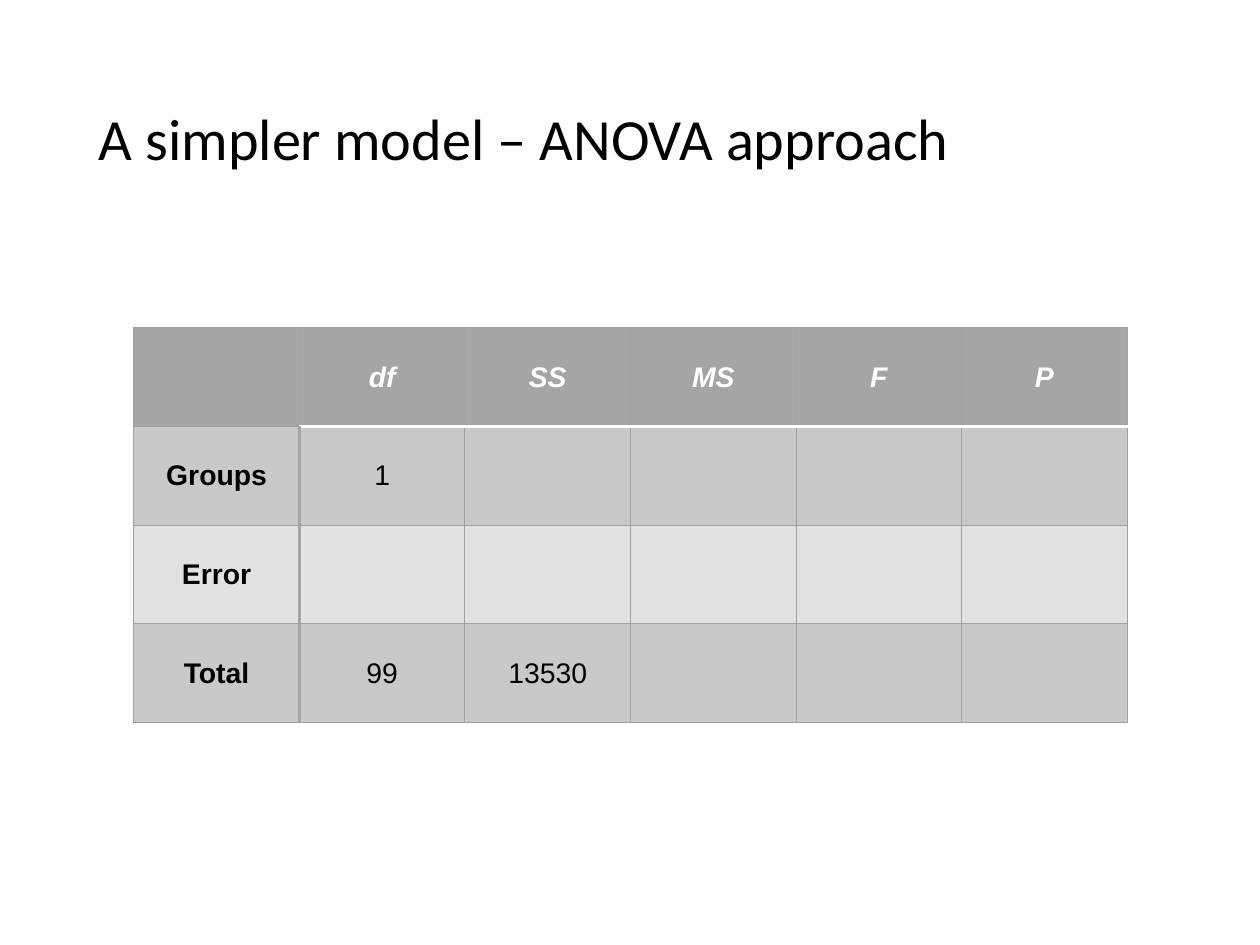
from dataclasses import dataclass

from lxml import etree
from pptx import Presentation
from pptx.dml.color import RGBColor
from pptx.enum.text import MSO_ANCHOR, PP_ALIGN
from pptx.oxml.ns import qn
from pptx.util import Inches, Pt

MIDDLE = MSO_ANCHOR.MIDDLE
LEFT, CENTER = PP_ALIGN.LEFT, PP_ALIGN.CENTER
TITLE_ONLY = 5


@dataclass(frozen=True)
class Theme:
    black: str = "000000"
    white: str = "FFFFFF"
    header: str = "A5A5A5"
    dark_band: str = "C9C9C9"
    light_band: str = "E2E2E2"
    grid: str = "A1A1A1"
    title_font: str = "Calibri"
    table_font: str = "Arial"
    title_size: float = 37
    table_size: float = 18
    thin: float = 0.75
    thick: float = 2


THEME = Theme()


def set_borders(cell, edges):
    """Draw cell edges from (side, colour, points), in the order L, R, T, B."""
    properties = cell._tc.get_or_add_tcPr()
    for position, (side, color, points) in enumerate(edges):
        line = etree.Element(qn(f"a:ln{side}"), w=str(Pt(points)))
        fill = etree.SubElement(line, qn("a:solidFill"))
        etree.SubElement(fill, qn("a:srgbClr"), val=color)
        properties.insert(position, line)


def style_text(paragraph, font_name, size, color, alignment):
    paragraph.alignment = alignment
    paragraph.font.name = font_name
    paragraph.font.size = Pt(size)
    paragraph.font.color.rgb = RGBColor.from_string(color)


prs = Presentation()
prs.slide_width, prs.slide_height = Inches(11.11), Inches(8.33)
slide = prs.slides.add_slide(prs.slide_layouts[TITLE_ONLY])

title = slide.shapes.title
title.left, title.top = Inches(0.76), Inches(0.44)
title.width, title.height = Inches(9.58), Inches(1.61)
heading = title.text_frame
heading.text = "A simpler model – ANOVA approach"
heading.vertical_anchor = MIDDLE
heading.word_wrap = True
heading.margin_left = heading.margin_right = Inches(0.11)
heading.margin_top = heading.margin_bottom = Inches(0.11)
heading.paragraphs[0].line_spacing = 0.9
style_text(heading.paragraphs[0], THEME.title_font, THEME.title_size, THEME.black, LEFT)

anova_rows = [
    ["", "df", "SS", "MS", "F", "P"],
    ["Groups", "1", "", "", "", ""],
    ["Error", "", "", "", "", ""],
    ["Total", "99", "13530", "", "", ""],
]
row_fills = [THEME.header, THEME.dark_band, THEME.light_band, THEME.dark_band]

anova = slide.shapes.add_table(
    len(anova_rows), len(anova_rows[0]),
    Inches(1.18), Inches(2.89), Inches(8.76), Inches(3.48),
).table

for row, values in enumerate(anova_rows):
    is_header = row == 0
    for column, value in enumerate(values):
        is_label = column == 0
        cell = anova.cell(row, column)
        cell.vertical_anchor = MIDDLE
        cell.fill.solid()
        cell.fill.fore_color.rgb = RGBColor.from_string(row_fills[row])

        edges = {side: (THEME.grid, THEME.thin) for side in "LRTB"}
        if is_header and not is_label:
            edges["B"] = (THEME.white, THEME.thick)
        if row == 1 and not is_label:
            edges["T"] = (THEME.white, THEME.thick)
        if not is_header and is_label:
            edges["R"] = (THEME.header, THEME.thick)
        if not is_header and column == 1:
            edges["L"] = (THEME.header, THEME.thick)
        set_borders(cell, [(side, *edge) for side, edge in edges.items()])

        cell.text = value
        entry = cell.text_frame.paragraphs[0]
        color = THEME.white if is_header else THEME.black
        style_text(entry, THEME.table_font, THEME.table_size, color, CENTER)
        entry.font.bold = is_header or is_label
        entry.font.italic = is_header

prs.save("out.pptx")
